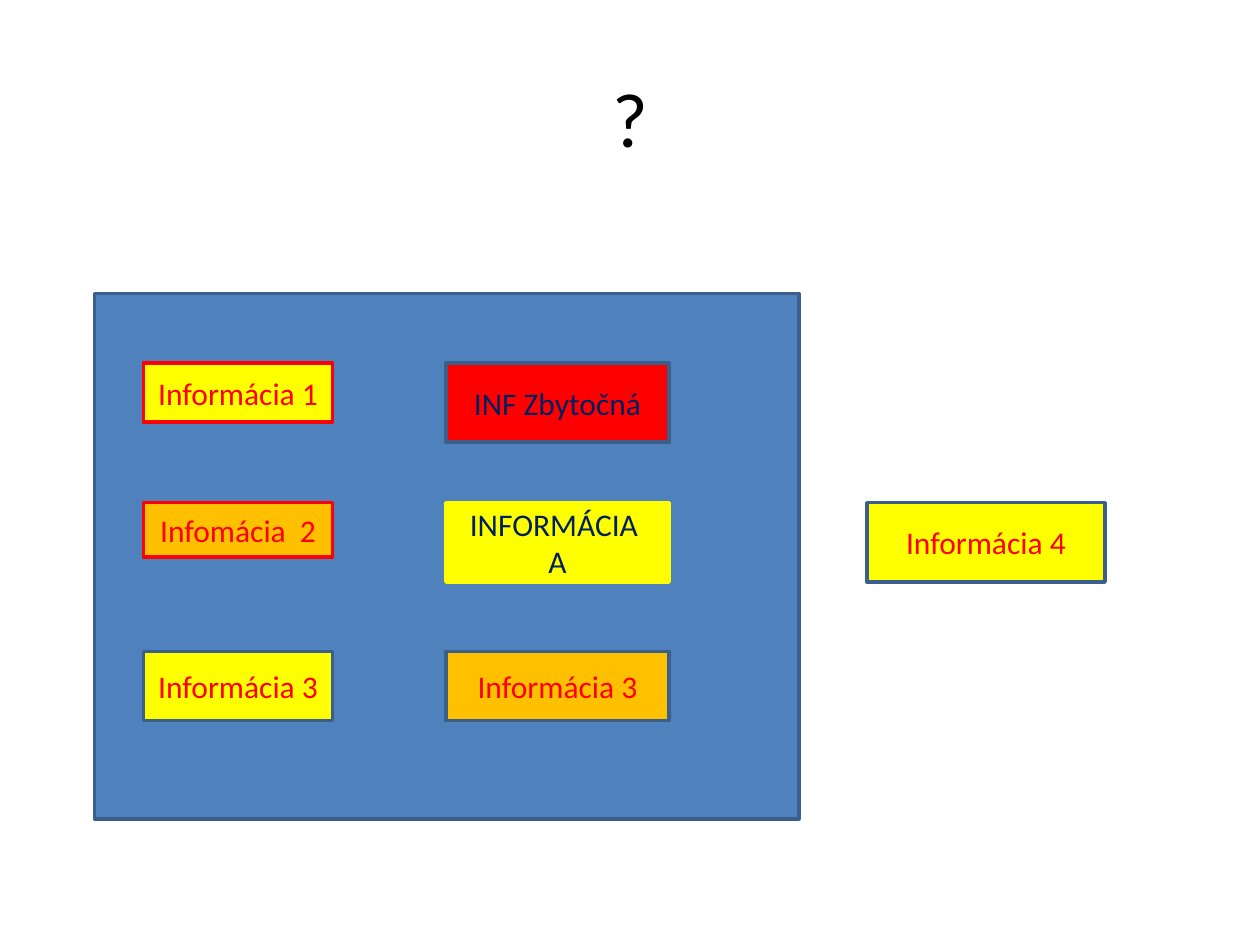
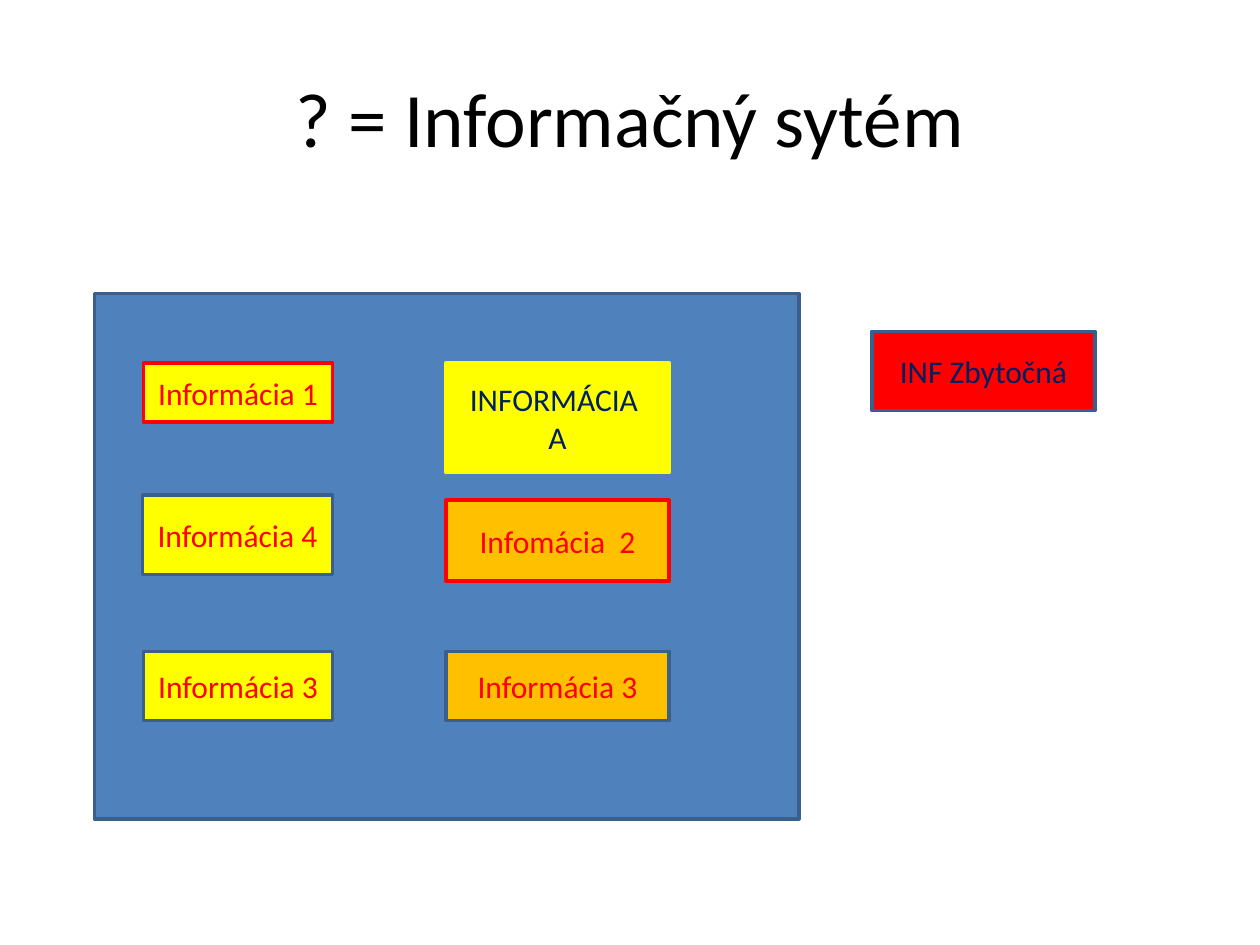
from pptx import Presentation
from pptx import util as u
from pptx.dml.color import RGBColor
from pptx.enum import shapes, text

BLACK = RGBColor(0x00, 0x00, 0x00)
BLUE = RGBColor(0x4F, 0x81, 0xBD)
EDGE = RGBColor(0x3A, 0x5F, 0x8C)
NAVY = RGBColor(0x00, 0x20, 0x60)
RED = RGBColor(0xFF, 0x00, 0x00)
YELLOW = RGBColor(0xFF, 0xFF, 0x00)
ORANGE = RGBColor(0xFF, 0xC0, 0x00)
FONT = "Calibri"
TITLE_ONLY = 5

# Grid in inches: (left, width) of columns, top of rows
LEFT, MIDDLE, OUTSIDE = (1.14, 1.5), (3.54, 1.77), (6.88, 1.89)
TOP_ROW, CENTRE_ROW, BOTTOM_ROW = 2.88, 3.99, 5.17
SYSTEM_FRAME = (0.75, 2.33, 5.59, 4.17)

# Each kind of information: wording, fill, line, font colour
INFO_1 = ("Informácia 1", YELLOW, RED, RED)
INFO_2 = ("Infomácia  2", ORANGE, RED, RED)
INFO_3 = ("Informácia 3", YELLOW, EDGE, RED)
INFO_3_ORANGE = ("Informácia 3", ORANGE, EDGE, RED)
INFO_4 = ("Informácia 4", YELLOW, EDGE, RED)
INFO_A = ("INFORMÁCIA  A", YELLOW, YELLOW, NAVY)
USELESS = ("INF Zbytočná", RED, EDGE, NAVY)

# Boxes that stay in place on both slides: kind, column, top, height
FIXED_BOXES = [
    (INFO_1, LEFT, TOP_ROW, 0.47),
    (INFO_3, LEFT, BOTTOM_ROW, 0.55),
    (INFO_3_ORANGE, MIDDLE, BOTTOM_ROW, 0.55),
]
SLIDES = [
    ("?", [
        (INFO_2, LEFT, CENTRE_ROW, 0.43),
        (USELESS, MIDDLE, TOP_ROW, 0.63),
        (INFO_A, MIDDLE, CENTRE_ROW, 0.63),
        (INFO_4, OUTSIDE, CENTRE_ROW, 0.63),
    ]),
    ("? = Informačný sytém", [
        (INFO_2, MIDDLE, 3.97, 0.64),
        (USELESS, (6.92, 1.77), 2.63, 0.63),
        (INFO_A, MIDDLE, TOP_ROW, 0.87),
        (INFO_4, (1.13, 1.51), 3.93, 0.63),
    ]),
]


def add_box(page, left, top, width, height, fill, line):
    box = page.shapes.add_shape(
        shapes.MSO_SHAPE.RECTANGLE,
        *(u.Inches(length) for length in (left, top, width, height)))
    box.shadow.inherit = False
    box.fill.solid()
    box.fill.fore_color.rgb = fill
    box.line.color.rgb = line
    box.line.width = u.Pt(2)
    return box


def write(box, wording, size, colour):
    frame = box.text_frame
    frame.word_wrap = True
    frame.vertical_anchor = text.MSO_ANCHOR.MIDDLE
    para = frame.paragraphs[0]
    para.text = wording
    para.alignment = text.PP_ALIGN.CENTER
    para.font.name = FONT
    para.font.size = u.Pt(size)
    para.font.color.rgb = colour


deck = Presentation()
deck.slide_width, deck.slide_height = u.Inches(10), u.Inches(7.5)

for heading, moving_boxes in SLIDES:
    page = deck.slides.add_slide(deck.slide_layouts[TITLE_ONLY])
    title = page.shapes.title
    title.left, title.top = u.Inches(0.5), u.Inches(0.3)
    title.width, title.height = u.Inches(9), u.Inches(1.25)
    write(title, heading, 44, BLACK)

    add_box(page, *SYSTEM_FRAME, BLUE, EDGE)
    for kind, (left, width), top, height in FIXED_BOXES + moving_boxes:
        wording, fill, line, colour = kind
        box = add_box(page, left, top, width, height, fill, line)
        write(box, wording, 18, colour)

deck.save("out.pptx")
